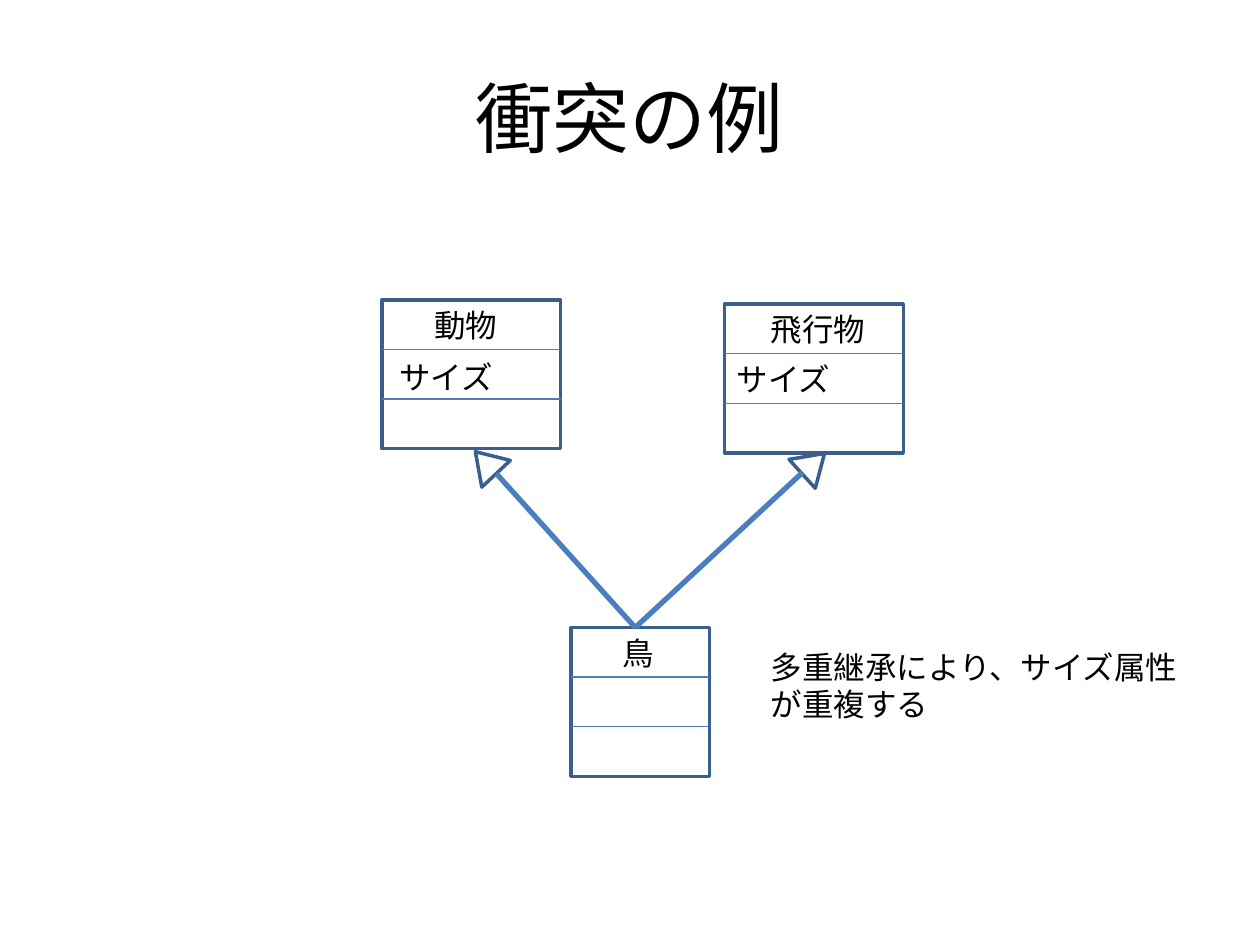
from lxml import etree
from pptx import Presentation
from pptx.dml.color import RGBColor
from pptx.enum import shapes, text
from pptx.oxml import ns
from pptx.util import Pt

COLORS = {"text": "000000", "border": "3A5F8C", "line": "4B7EBC"}
FONT = "Calibri"
TITLE = "衝突の例"
CLASS_HEIGHT = 85
CLASSES = [
    {"left": 326.2, "top": 358.6, "width": 79.2},
    {"left": 218.2, "top": 171.4, "width": 102.2},
    {"left": 414, "top": 173.8, "width": 102.2},
]
LABELS = [
    ("鳥", 348.5, 358.6, 28, 29, False),
    ("動物", 241.2, 171.4, 62.6, 29, False),
    ("飛行物", 433.4, 173.8, 73.4, 29, False),
    ("サイズ", 221, 201, 79.2, 29, False),
    ("サイズ", 414, 202.3, 67.7, 29, False),
    ("多重継承により、サイズ属性が重複する", 433.4, 366.5, 254.9, 51, True),
]
CHILD_TOP = (363, 358.6)
HEAD_SIZE = (22.3, 17.3)
INHERITANCE = [
    {"head": (266.4, 255.8), "angle": 316.9, "end": (283.7, 270.7)},
    {"head": (453.6, 256.3), "angle": 47.7, "end": (458.6, 270)},
]


def rgb(name):
    return RGBColor.from_string(COLORS[name])


def format_text(frame, size):
    for para in frame.paragraphs:
        for span in para.runs:
            span.font.name = FONT
            span.font.size = Pt(size)
            span.font.color.rgb = rgb("text")


def add_outline(page, kind, left, top, width, height):
    shape = page.shapes.add_shape(kind, Pt(left), Pt(top), Pt(width), Pt(height))
    shape.shadow.inherit = False
    shape.fill.background()
    shape.line.color.rgb = rgb("border")
    shape.line.width = Pt(2)
    return shape


def add_line(page, start, end, weight):
    line = page.shapes.add_connector(
        shapes.MSO_CONNECTOR.STRAIGHT, *[Pt(value) for value in (*start, *end)])
    line.line.color.rgb = rgb("line")
    line.line.width = Pt(weight)
    etree.SubElement(line._element.spPr, ns.qn("a:effectLst"))


def add_class(page, left, top, width):
    add_outline(page, shapes.MSO_SHAPE.RECTANGLE, left, top, width, CLASS_HEIGHT)
    for row in (1, 2):
        y = top + row * CLASS_HEIGHT / 3
        add_line(page, (left, y), (left + width, y), 0.75)


def add_inheritance(page, head, angle, end):
    triangle = add_outline(
        page, shapes.MSO_SHAPE.ISOSCELES_TRIANGLE, *head, *HEAD_SIZE)
    triangle.rotation = angle
    add_line(page, CHILD_TOP, end, 3)


def add_label(page, words, left, top, width, height, wrap):
    box = page.shapes.add_textbox(Pt(left), Pt(top), Pt(width), Pt(height))
    box.text_frame.text = words
    box.text_frame.word_wrap = wrap
    box.text_frame.auto_size = text.MSO_AUTO_SIZE.SHAPE_TO_FIT_TEXT
    format_text(box.text_frame, 18)


def add_title(page):
    title = page.shapes.title
    title.left, title.top, title.width, title.height = Pt(36), Pt(21.6), Pt(648), Pt(90)
    title.text_frame.text = TITLE
    title.text_frame.vertical_anchor = text.MSO_ANCHOR.MIDDLE
    title.text_frame.paragraphs[0].alignment = text.PP_ALIGN.CENTER
    format_text(title.text_frame, 44)


def main():
    deck = Presentation()
    deck.slide_width, deck.slide_height = Pt(720), Pt(540)
    page = deck.slides.add_slide(deck.slide_layouts[5])
    add_title(page)
    for item in CLASSES:
        add_class(page, **item)
    for item in INHERITANCE:
        add_inheritance(page, **item)
    for item in LABELS:
        add_label(page, *item)
    deck.save("out.pptx")


if __name__ == "__main__":
    main()
